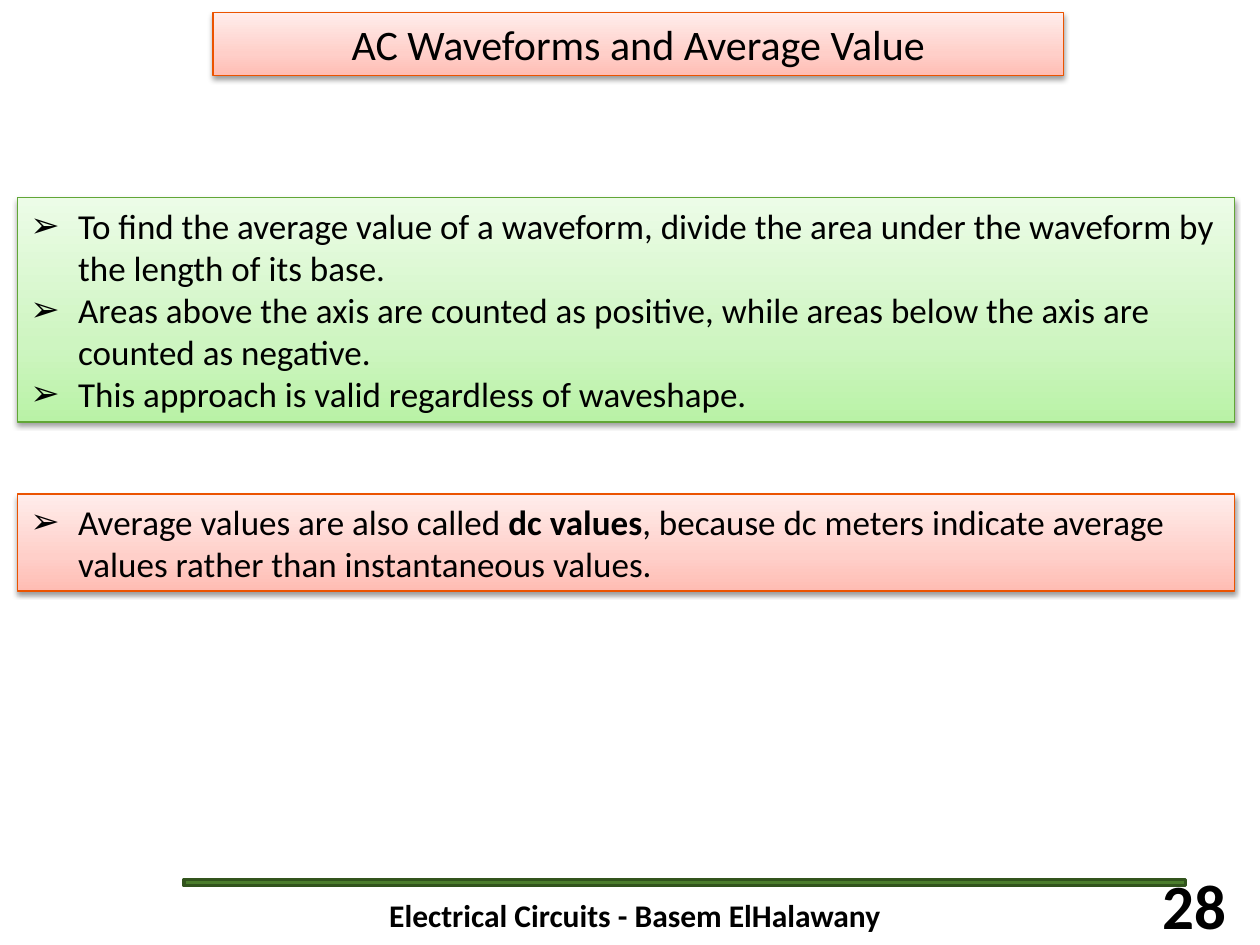
import pptx
import pptx.dml.color
import pptx.enum.shapes
import pptx.enum.text
import pptx.oxml
import pptx.oxml.ns
import pptx.util
from lxml import etree

Inches, Pt = pptx.util.Inches, pptx.util.Pt
ALIGN = pptx.enum.text.PP_ALIGN
ANCHOR = pptx.enum.text.MSO_ANCHOR
qn = pptx.oxml.ns.qn

# Gradient colours from bottom to top, then the outline
RED = (("FFBCB3", "FFCFC9", "FFEDEB"), "EB5300")
GREEN = (("B9F2A6", "CEF5C1", "ECFCE7"), "61A637")
STOPS = (0, 35, 100)

RULES = [
    [("To find the average value of a waveform, divide the area under the "
      "waveform by the length of its base.", False)],
    [("Areas above the axis are counted as positive, while areas below the "
      "axis are counted as negative.", False)],
    [("This approach is valid regardless of waveshape.", False)],
]
DC_VALUES = [
    [("Average values are also called ", False), ("dc values", True),
     (", because dc meters indicate average values rather than "
      "instantaneous values.", False)],
]


def rgb(color):
    return pptx.dml.color.RGBColor.from_string(color)


def add_color(parent, color):
    return etree.SubElement(parent, qn("a:srgbClr"), val=color)


def style_panel(s, theme):
    """Give a shape a three-stop gradient, a thin outline and a soft shadow."""
    colors, line = theme
    s.fill.gradient()
    s.fill.gradient_angle = 90
    stops = s._element.spPr.find(qn("a:gradFill")).find(qn("a:gsLst"))
    for stop in list(stops):
        stops.remove(stop)
    for pos, color in zip(STOPS, colors):
        add_color(etree.SubElement(stops, qn("a:gs"), pos=str(pos * 1000)), color)
    s.line.color.rgb = rgb(line)
    s.line.width = Pt(0.75)

    effects = etree.SubElement(s._element.spPr, qn("a:effectLst"))
    shadow = etree.SubElement(effects, qn("a:outerShdw"), blurRad="40000",
                              dist="20000", dir="5400000", rotWithShape="0")
    etree.SubElement(add_color(shadow, "000000"), qn("a:alpha"), val="38000")


def set_panel(s, box, theme, anchor):
    """Place and style a placeholder at a fixed size; return its text frame."""
    s.left, s.top, s.width, s.height = (Inches(v) for v in box)
    style_panel(s, theme)
    tf = s.text_frame
    tf.auto_size = pptx.enum.text.MSO_AUTO_SIZE.NONE
    tf.vertical_anchor = anchor
    return tf


def format_font(font, size, bold=False):
    font.name = "Calibri"
    font.size = Pt(size)
    font.bold = bold
    font.color.rgb = rgb("000000")


def fill_title(s, box, text):
    tf = set_panel(s, box, RED, ANCHOR.MIDDLE)
    tf.text = text
    p = tf.paragraphs[0]
    p.alignment = ALIGN.CENTER
    format_font(p.runs[0].font, 24)


def fill_list(s, box, items, theme):
    tf = set_panel(s, box, theme, ANCHOR.TOP)
    for i, item in enumerate(items):
        p = tf.add_paragraph() if i else tf.paragraphs[0]
        p.space_before = Pt(0)
        pPr = p._p.get_or_add_pPr()
        pPr.set("marL", str(Inches(0.38)))
        pPr.set("indent", str(-Inches(0.38)))
        etree.SubElement(pPr, qn("a:buChar"), char="➢")
        for text, bold in item:
            r = p.add_run()
            r.text = text
            format_font(r.font, 20, bold)


def add_label(slide, box, text, size, alignment):
    s = slide.shapes.add_textbox(*(Inches(v) for v in box))
    tf = s.text_frame
    tf.word_wrap = True
    tf.vertical_anchor = ANCHOR.MIDDLE
    tf.text = text
    p = tf.paragraphs[0]
    p.alignment = alignment
    format_font(p.runs[0].font, size, True)


def add_footer(slide, box):
    left, top, width, height = box
    bar = slide.shapes.add_shape(pptx.enum.shapes.MSO_SHAPE.RECTANGLE,
                                 *(Inches(v) for v in (left, top, width, 0.05)))
    bar.shadow.inherit = False
    bar.fill.solid()
    bar.fill.fore_color.rgb = rgb("4B7D2C")
    bar.line.color.rgb = rgb("32541D")
    bar.line.width = Pt(2)
    add_label(slide, (left + 0.31, top + 0.08, 6.54, height),
              "Electrical Circuits - Basem ElHalawany", 18, ALIGN.CENTER)
    add_label(slide, (left + width - 0.39, top, 0.81, height),
              "28", 36, ALIGN.RIGHT)


def main():
    prs = pptx.Presentation()
    prs.slide_width, prs.slide_height = Inches(10), Inches(7.5)
    slide = prs.slides.add_slide(prs.slide_layouts.get_by_name("Two Content"))
    title, rules, dc_values = slide.placeholders
    fill_title(title, (1.69, 0.1, 6.75, 0.5), "AC Waveforms and Average Value")
    fill_list(rules, (0.14, 1.57, 9.66, 1.78), RULES, GREEN)
    fill_list(dc_values, (0.14, 3.92, 9.66, 0.77), DC_VALUES, RED)
    add_footer(slide, (1.46, 6.98, 7.95, 0.4))
    prs.save("out.pptx")


if __name__ == "__main__":
    main()
